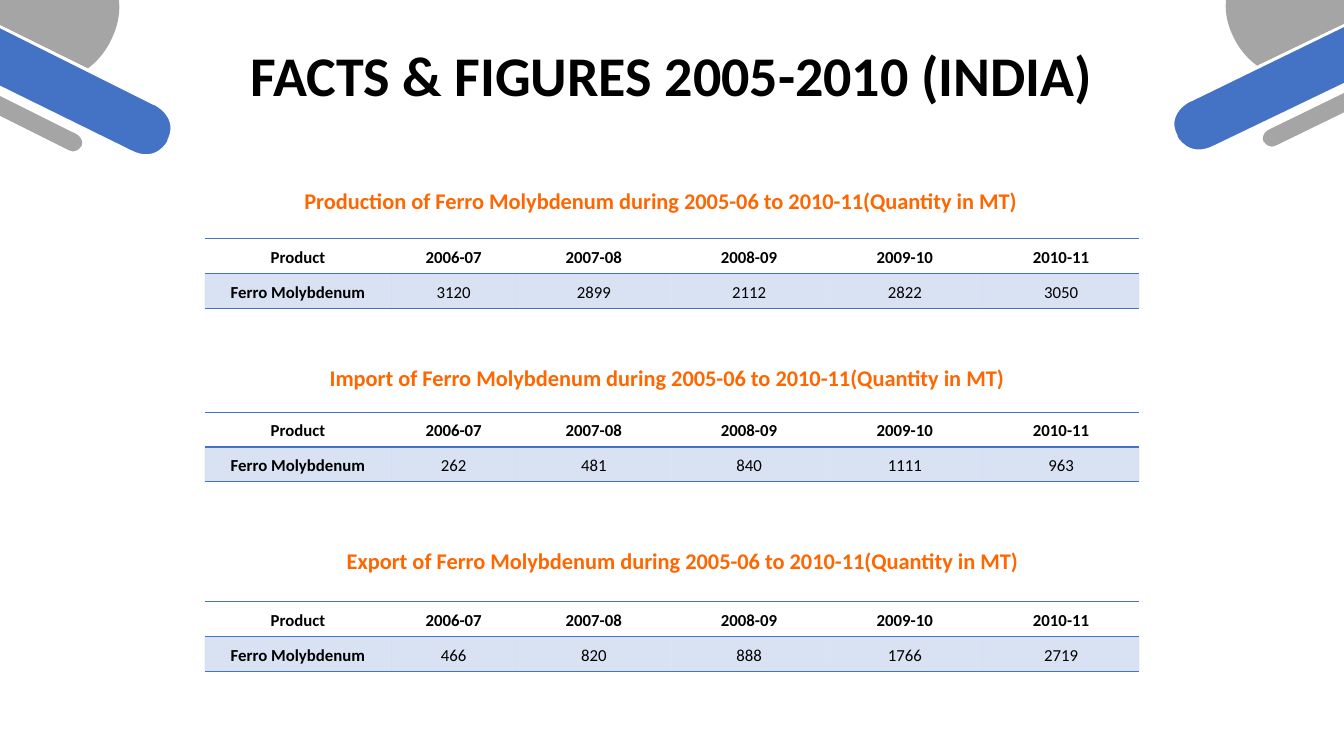
from lxml.etree import SubElement
from pptx import Presentation
from pptx.dml.color import RGBColor
from pptx.enum.text import MSO_ANCHOR, PP_ALIGN
from pptx.oxml import parse_xml
from pptx.oxml.ns import nsdecls, qn
from pptx.util import Inches, Pt

FONT = "Calibri"
BLUE, GRAY, WHITE, BLACK, ORANGE = "4472C4", "A5A5A5", "FFFFFF", "000000", "FF6600"
SLIDE_W, SLIDE_H = 13.33, 7.5
NO_STYLE = "{2D5ABB26-0587-4C30-8999-92F81FD0307C}"

# Corner outlines in inches: a pair is a line's end, six numbers are a Bézier curve
CORNER = [
    (BLUE, [(1.53, 1.03), (1.53, 1.03, 1.79, 1.16, 1.68, 1.39), (1.67, 1.4),
            (1.67, 1.4, 1.56, 1.64, 1.29, 1.51), (0, 0.86), (0, 0.26)]),
    (GRAY, [(1.09, 0.42), (1.09, 0.42, 1.02, 0.57, 0.87, 0.68), (0, 0.25), (0, 0),
            (1.18, 0), (1.19, 0.11, 1.18, 0.24, 1.1, 0.4)]),
    (GRAY, [(0, 0.93), (0.76, 1.31), (0.76, 1.31, 0.86, 1.36, 0.82, 1.46),
            (0.82, 1.46, 0.77, 1.56, 0.67, 1.51), (0, 1.17)]),
    (WHITE, [(0.68, 1.49), (0.76, 1.53, 0.8, 1.46, 0.8, 1.46), (0.81, 1.45),
             (0.84, 1.37, 0.76, 1.33, 0.76, 1.33), (0, 0.95), (0, 0.92), (0.77, 1.3),
             (0.77, 1.3, 0.82, 1.33, 0.84, 1.38), (0.85, 1.41, 0.85, 1.44, 0.83, 1.47),
             (0.82, 1.5, 0.78, 1.54, 0.73, 1.54), (0.71, 1.54, 0.69, 1.53, 0.67, 1.52),
             (0, 1.19), (0, 1.15)]),
    (WHITE, [(1.3, 1.49), (1.55, 1.62, 1.66, 1.4, 1.66, 1.4), (1.66, 1.39),
             (1.71, 1.29, 1.7, 1.21, 1.64, 1.13), (1.59, 1.07, 1.53, 1.04, 1.52, 1.04),
             (0, 0.28), (0, 0.25), (1.54, 1.01), (1.54, 1.02, 1.67, 1.08, 1.71, 1.2),
             (1.73, 1.26, 1.72, 1.33, 1.69, 1.4), (1.69, 1.41),
             (1.69, 1.41, 1.61, 1.56, 1.45, 1.56), (1.4, 1.56, 1.35, 1.55, 1.29, 1.52),
             (0, 0.88), (0, 0.85)]),
]

COL_WIDTHS = [1.85, 1.24, 1.54, 1.54, 1.55, 1.55]
HEADER = ["Product", "2006-07", "2007-08", "2008-09", "2009-10", "2010-11"]
# Kind, caption box (left, top, width), table top, quantities
SECTIONS = [
    ("Production", (2.92, 1.8, 7.49), 2.37, [3120, 2899, 2112, 2822, 3050]),
    ("Import", (3.17, 3.56, 6.99), 4.09, [262, 481, 840, 1111, 963]),
    ("Export", (3.34, 5.38, 6.96), 5.97, [466, 820, 888, 1766, 2719]),
]


def rgb(color):
    return RGBColor.from_string(color)


def bend_curves(sp, outline):
    """Join each curve's three line segments into one Bézier segment."""
    segments = iter(list(sp._element.iter(qn("a:lnTo"))))
    for part in outline[1:]:
        segment = next(segments)
        if len(part) == 6:
            segment.tag = qn("a:cubicBezTo")
            for _ in range(2):
                line = next(segments)
                segment.append(line[0])
                line.getparent().remove(line)


def add_corner(s, x, y, x_scale=1, y_scale=1):
    """Draw the bars from a slide corner; a negative x_scale mirrors them."""
    for color, outline in CORNER:
        points = [(Inches(x + part[i] * x_scale), Inches(y + part[i + 1] * y_scale))
                  for part in outline for i in range(0, len(part), 2)]
        builder = s.shapes.build_freeform(*points[0])
        builder.add_line_segments(points[1:], close=True)
        sp = builder.convert_to_shape()
        bend_curves(sp, outline)
        sp.shadow.inherit = False
        sp.fill.solid()
        sp.fill.fore_color.rgb = rgb(color)
        sp.line.fill.background()


def format_paragraph(p, size, color, bold=True, align=PP_ALIGN.CENTER):
    p.alignment = align
    p.font.name = FONT
    p.font.size = Pt(size)
    p.font.bold = bold
    p.font.color.rgb = rgb(color)


def add_text(s, box, text, size, color, align, anchor):
    tf = s.shapes.add_textbox(*map(Inches, box)).text_frame
    tf.word_wrap = True
    tf.vertical_anchor = anchor
    p = tf.paragraphs[0]
    p.text = text
    format_paragraph(p, size, color, align=align)
    return p


def tint(cell):
    """Fill a cell with blue at 20 % opacity."""
    cell.fill.solid()
    cell.fill.fore_color.rgb = rgb(BLUE)
    color = cell._tc.tcPr.find(qn("a:solidFill"))[0]
    SubElement(color, qn("a:alpha"), val="20000")


def add_rules(cell):
    """Rule a cell above and below."""
    tcPr = cell._tc.get_or_add_tcPr()
    for i, tag in enumerate(("lnT", "lnB")):
        ln = parse_xml(f'<a:{tag} {nsdecls("a")} w="12700"/>')
        fill = SubElement(ln, qn("a:solidFill"))
        SubElement(fill, qn("a:srgbClr"), val=BLUE)
        tcPr.insert(i, ln)


def add_quantity_table(s, x, y, quantities, row_h=0.345):
    rows = [HEADER, ["Ferro Molybdenum", *quantities]]
    table = s.shapes.add_table(len(rows), len(HEADER), Inches(x), Inches(y),
                               Inches(sum(COL_WIDTHS)), Inches(row_h * len(rows))).table
    table._tbl.tblPr.find(qn("a:tableStyleId")).text = NO_STYLE
    table.horz_banding = False
    for col, width in zip(table.columns, COL_WIDTHS):
        col.width = Inches(width)
    for r, values in enumerate(rows):
        table.rows[r].height = Inches(row_h)
        for c, value in enumerate(values):
            cell = table.cell(r, c)
            cell.margin_left = cell.margin_right = Inches(0.07)
            cell.margin_top = cell.margin_bottom = 0
            cell.vertical_anchor = MSO_ANCHOR.MIDDLE
            if r == 0:
                cell.fill.background()
            else:
                tint(cell)
            add_rules(cell)
            p = cell.text_frame.paragraphs[0]
            p.text = str(value)
            p.line_spacing = 1.15
            format_paragraph(p, 12, BLACK, bold=r == 0 or c == 0)


def main():
    prs = Presentation()
    prs.slide_width, prs.slide_height = Inches(SLIDE_W), Inches(SLIDE_H)
    s = prs.slides.add_slide(prs.slide_layouts[6])
    add_corner(s, 0, 0)
    add_corner(s, SLIDE_W + 0.01, -0.01, x_scale=-1, y_scale=0.975)
    title = add_text(s, (2.2, 0.39, 8.92, 0.74), "FACTS & FIGURES 2005-2010 (INDIA)",
                     40, BLACK, PP_ALIGN.CENTER, MSO_ANCHOR.BOTTOM)
    title.line_spacing = 0.9
    for kind, caption_box, table_top, quantities in SECTIONS:
        add_quantity_table(s, 2.03, table_top, quantities)
        add_text(s, (*caption_box, 0.37),
                 f"{kind} of Ferro Molybdenum during 2005-06 to 2010-11(Quantity in MT)",
                 16, ORANGE, PP_ALIGN.LEFT, MSO_ANCHOR.MIDDLE)
    prs.save("out.pptx")


if __name__ == "__main__":
    main()
